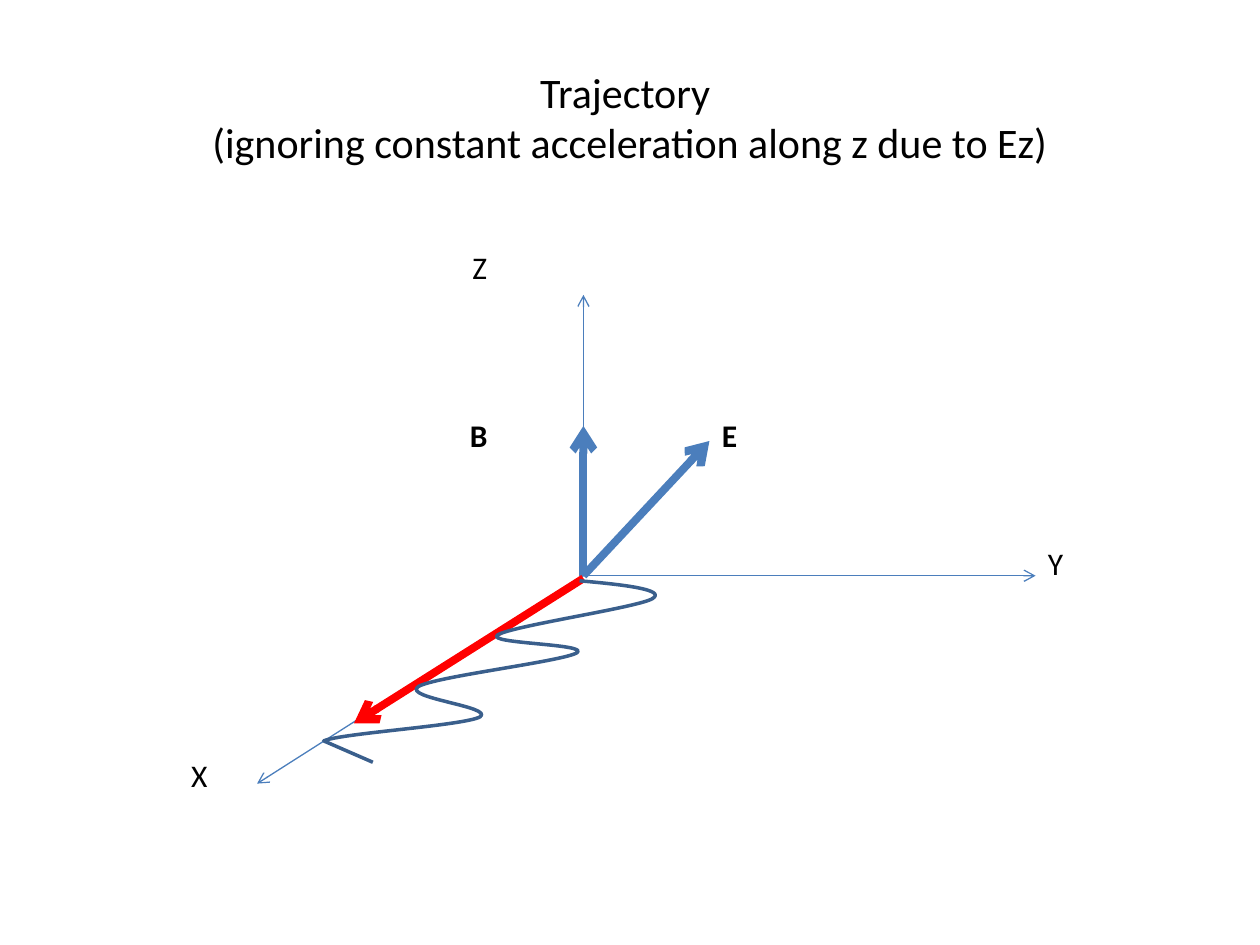
from dataclasses import dataclass

from lxml import etree
from pptx import Presentation
from pptx.dml.color import RGBColor
from pptx.enum.shapes import MSO_CONNECTOR
from pptx.enum.text import MSO_ANCHOR, PP_ALIGN
from pptx.oxml.ns import qn
from pptx.shapes.group import GroupShape
from pptx.text.text import TextFrame
from pptx.util import Pt

STRAIGHT = MSO_CONNECTOR.STRAIGHT
CENTER = PP_ALIGN.CENTER
MIDDLE = MSO_ANCHOR.MIDDLE

COLORS = {"text": "000000", "axis": "4B7EBC", "drift": "FF0000", "path": "3A5F8C"}
FONT = "Calibri"
AXIS_WIDTH = 0.75
VECTOR_WIDTH = 4.5
Point = tuple[float, float]


@dataclass
class Arrow:
    start: Point
    end: Point
    width: float
    color: str = "axis"


@dataclass
class Label:
    text: str
    left: float
    top: float
    bold: bool = False


@dataclass
class Curve:
    first_control: Point
    second_control: Point
    end: Point


ORIGIN = (333.4, 329)
ARROWS = [
    Arrow(ORIGIN, (146.9, 447.8), AXIS_WIDTH),
    Arrow(ORIGIN, (333.4, 168.5), AXIS_WIDTH),
    Arrow(ORIGIN, (591.8, 329), AXIS_WIDTH),
    Arrow(ORIGIN, (333.4, 243.4), VECTOR_WIDTH),
    Arrow(ORIGIN, (405.4, 252), VECTOR_WIDTH),
    Arrow((333.4, 330.5), (202.3, 413.3), VECTOR_WIDTH, "drift"),
]
LABELS = [
    Label("X", 102.2, 428.4),
    Label("Y", 591.8, 307.4),
    Label("Z", 262.8, 138.2),
    Label("B", 261.4, 234, True),
    Label("E", 405.4, 234, True),
]
PATH_START = (331.2, 331.9)
CURVES = [
    Curve((356.4, 334.1), (380.9, 337), (373, 342)),
    Curve((365.8, 347), (291.6, 357.8), (284.4, 362.9)),
    Curve((277.2, 367.9), (337, 367.9), (329.8, 373)),
    Curve((321.8, 378), (248.4, 386.6), (239, 392.4)),
    Curve((229.7, 398.9), (283, 403.9), (274.3, 409.7)),
    Curve((265, 414.7), (195.1, 419), (185, 423.4)),
]
PATH_END = (213.1, 435.6)


def add_text(text_frame: TextFrame, lines: list[str], size: float, bold: bool = False) -> None:
    paragraph = text_frame.paragraphs[0]
    for index, line in enumerate(lines):
        if index:
            paragraph.add_line_break()
        run = paragraph.add_run()
        run.text = line
        run.font.name = FONT
        run.font.size = Pt(size)
        run.font.bold = bold
        run.font.color.rgb = RGBColor.from_string(COLORS["text"])


def draw_arrow(group: GroupShape, arrow: Arrow) -> None:
    ends = [Pt(value) for value in arrow.start + arrow.end]
    connector = group.shapes.add_connector(STRAIGHT, *ends)
    connector.line.color.rgb = RGBColor.from_string(COLORS[arrow.color])
    connector.line.width = Pt(arrow.width)
    properties = connector._element.spPr
    etree.SubElement(properties.find(qn("a:ln")), qn("a:tailEnd"), type="arrow")
    etree.SubElement(properties, qn("a:effectLst"))


def draw_label(group: GroupShape, label: Label) -> None:
    box = group.shapes.add_textbox(Pt(label.left), Pt(label.top), Pt(56), Pt(52))
    box.text_frame.word_wrap = True
    add_text(box.text_frame, [label.text], 18, label.bold)


def draw_trajectory(group: GroupShape) -> None:
    anchors = [curve.end for curve in CURVES] + [PATH_END]
    builder = group.shapes.build_freeform(Pt(PATH_START[0]), Pt(PATH_START[1]))
    builder.add_line_segments([(Pt(x), Pt(y)) for x, y in anchors], close=False)
    shape = builder.convert_to_shape()
    shape.shadow.inherit = False
    shape.fill.background()
    shape.line.color.rgb = RGBColor.from_string(COLORS["path"])
    shape.line.width = Pt(2)
    segments = list(shape._element.iter(qn("a:lnTo")))
    for segment, curve in zip(segments, CURVES):
        segment.tag = qn("a:cubicBezTo")
        controls = (curve.first_control, curve.second_control)
        for index, (x, y) in enumerate(controls):
            point = etree.Element(qn("a:pt"))
            point.set("x", str(Pt(x) - shape.left))
            point.set("y", str(Pt(y) - shape.top))
            segment.insert(index, point)


def main() -> None:
    presentation = Presentation()
    presentation.slide_width, presentation.slide_height = Pt(720), Pt(540)
    slide = presentation.slides.add_slide(presentation.slide_layouts[5])

    title = slide.shapes.title
    title.left, title.top, title.width, title.height = Pt(36), Pt(21.6), Pt(648), Pt(90)
    title.text_frame.vertical_anchor = MIDDLE
    title.text_frame.paragraphs[0].alignment = CENTER
    title_lines = ["Trajectory ", "(ignoring constant acceleration along z due to Ez)"]
    add_text(title.text_frame, title_lines, 24)

    diagram = slide.shapes.add_group_shape()
    for arrow in ARROWS:
        draw_arrow(diagram, arrow)
    for label in LABELS:
        draw_label(diagram, label)
    draw_trajectory(diagram)

    presentation.save("out.pptx")


if __name__ == "__main__":
    main()
